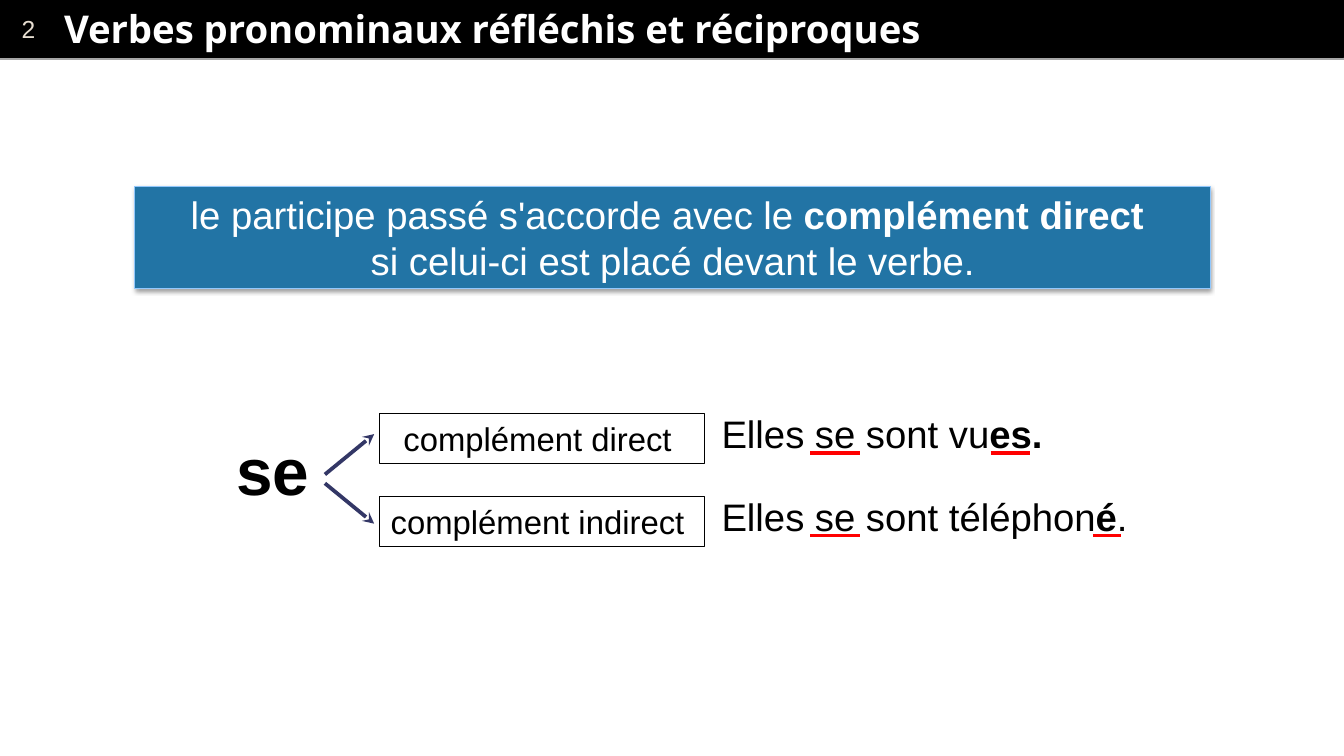
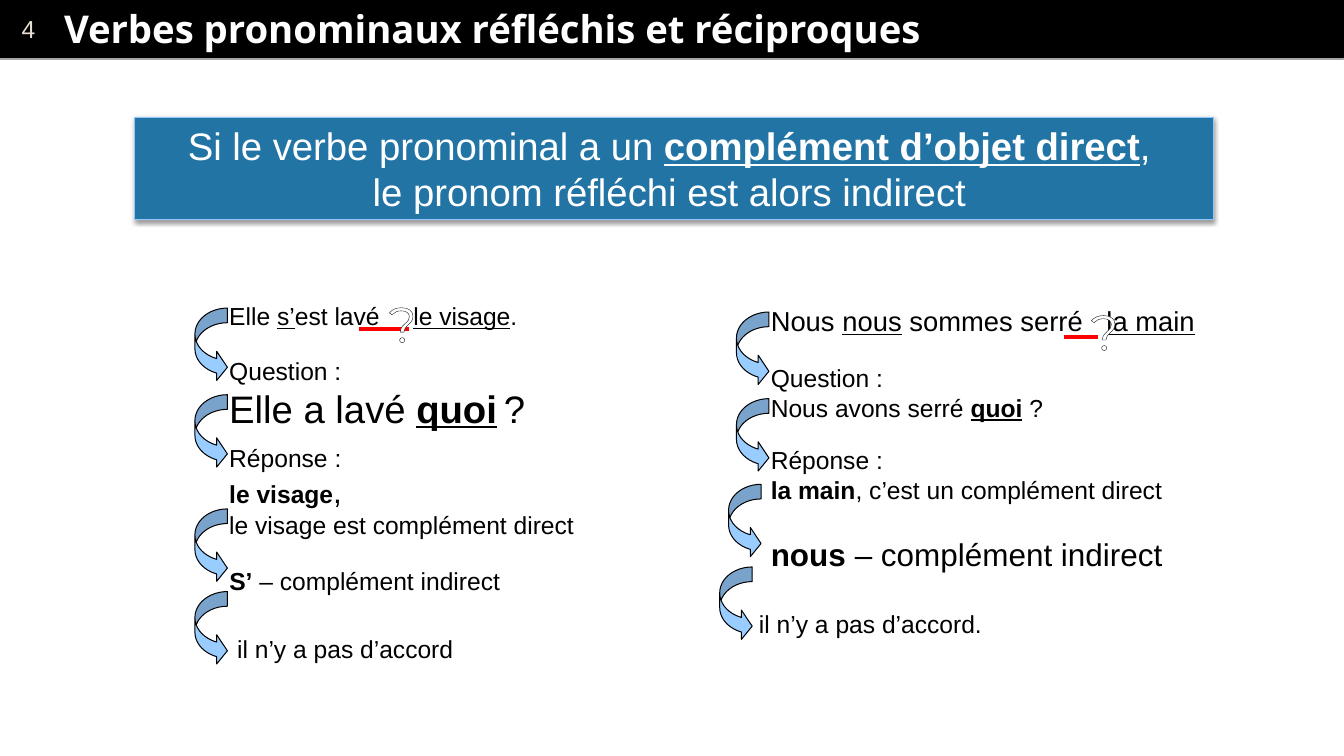
"""Build two French grammar slides about the agreement of pronominal verbs."""
import dataclasses

import lxml.etree
import pptx
import pptx.dml.color
import pptx.enum.shapes
import pptx.enum.text
import pptx.oxml.ns
import pptx.util

RGBColor = pptx.dml.color.RGBColor
Shape = pptx.enum.shapes.MSO_SHAPE
Anchor = pptx.enum.text.MSO_ANCHOR
Align = pptx.enum.text.PP_ALIGN

EMU_PER_PX = 9144
BLACK = RGBColor(0x00, 0x00, 0x00)
WHITE = RGBColor(0xFF, 0xFF, 0xFF)
RED = RGBColor(0xFF, 0x00, 0x00)
NAVY = RGBColor(0x33, 0x37, 0x66)
GREY = RGBColor(0xA6, 0xA6, 0xA6)
SAND = RGBColor(0xE7, 0xDE, 0xD1)
BANNER_BLUE = RGBColor(0x22, 0x74, 0xA5)
BANNER_EDGE = RGBColor(0x93, 0xC8, 0xFC)
ARROW_BLUE = RGBColor(0x99, 0xCC, 0xFF)

BODY_FONT = "Arial"
TITLE_FONT = "Open Sans"
MARK_FONT = "Montserrat"
TITLE = "Verbes pronominaux réfléchis et réciproques"
SLIDE_WIDTH, SLIDE_HEIGHT = 1365, 768


@dataclasses.dataclass
class Run:
    """A stretch of text with one format."""
    text: str
    size: int = 18
    bold: bool = False
    underline: bool = False


def px(*lengths):
    """Turn lengths in px into EMU."""
    return [pptx.util.Emu(length * EMU_PER_PX) for length in lengths]


def add_xml(parent, tag, **attributes):
    """Append a DrawingML element to a parent element."""
    return lxml.etree.SubElement(parent, pptx.oxml.ns.qn(tag), attributes)


def write(shape, paragraphs, color=BLACK, align=Align.LEFT, font=BODY_FONT, anchor=Anchor.MIDDLE):
    """Fill a shape with paragraphs, each a list of runs."""
    frame = shape.text_frame
    frame.word_wrap = True
    frame.auto_size = pptx.enum.text.MSO_AUTO_SIZE.NONE
    frame.vertical_anchor = anchor
    for index, runs in enumerate(paragraphs):
        paragraph = frame.add_paragraph() if index else frame.paragraphs[0]
        paragraph.alignment = align
        for part in runs:
            run = paragraph.add_run()
            run.text = part.text
            run.font.name = font
            run.font.size = pptx.util.Pt(part.size)
            run.font.bold = part.bold
            run.font.underline = part.underline
            run.font.color.rgb = color


def add_shape(slide, kind, box, fill=None, line=BLACK):
    """Add a preset shape with a thin outline."""
    shape = slide.shapes.add_shape(kind, *px(*box))
    shape.shadow.inherit = False
    if fill is None:
        shape.fill.background()
    else:
        shape.fill.solid()
        shape.fill.fore_color.rgb = fill
    shape.line.color.rgb = line
    shape.line.width = pptx.util.Pt(0.75)
    return shape


def add_line(slide, start, end, color=RED, width=2.75, arrow=False):
    """Add a straight line, with an arrowhead at its end if asked."""
    line = slide.shapes.add_connector(
        pptx.enum.shapes.MSO_CONNECTOR.STRAIGHT, *px(*start, *end))
    line.line.color.rgb = color
    line.line.width = pptx.util.Pt(width)
    if arrow:
        add_xml(line.line._get_or_add_ln(), "a:tailEnd", type="stealth")
    add_xml(line.element.spPr, "a:effectLst")
    return line


def add_text(slide, box, *paragraphs, anchor=Anchor.MIDDLE, tab=None):
    """Add a text box, with one tab stop if given."""
    shape = slide.shapes.add_textbox(*px(*box))
    write(shape, paragraphs, anchor=anchor)
    if tab:
        properties = shape.text_frame.paragraphs[0]._p.get_or_add_pPr()
        stops = add_xml(properties, "a:tabLst")
        add_xml(stops, "a:tab", pos=str(tab * EMU_PER_PX), algn="l")


def add_banner(slide, box, *paragraphs):
    """Add the blue rule banner with its soft shadow."""
    banner = add_shape(slide, Shape.RECTANGLE, box, BANNER_BLUE, BANNER_EDGE)
    effects = banner.element.spPr.find(pptx.oxml.ns.qn("a:effectLst"))
    shadow = add_xml(effects, "a:outerShdw", blurRad=str(pptx.util.Pt(3.1)),
                     dist=str(pptx.util.Pt(1.6)), dir="5400000", rotWithShape="0")
    add_xml(add_xml(shadow, "a:srgbClr", val=str(BLACK)), "a:alpha", val="38000")
    write(banner, paragraphs, WHITE, Align.CENTER)


def add_question_mark(slide, left, top):
    """Add a large outlined question mark."""
    mark = slide.shapes.add_textbox(*px(left, top, 25, 35))
    write(mark, [[Run("?", 36)]], WHITE, font=MARK_FONT, anchor=Anchor.TOP)
    mark.text_frame.word_wrap = False
    properties = mark.text_frame.paragraphs[0].runs[0].font._element
    outline = add_xml(properties, "a:ln", w=str(pptx.util.Pt(0.75)))
    add_xml(add_xml(outline, "a:solidFill"), "a:srgbClr", val=str(BLACK))
    properties.insert(0, outline)


def add_curved_arrows(slide, *corners):
    """Add a curved arrow at each corner point."""
    for left, top in corners:
        arrow = add_shape(slide, Shape.CURVED_RIGHT_ARROW, (left, top, 33, 75), ARROW_BLUE)
        for index, value in enumerate((0.45, 0.9, 0.33)):
            arrow.adjustments[index] = value


def add_titled_slide(presentation, number):
    """Add a slide with the black band, its number and the title."""
    slide = presentation.slides.add_slide(presentation.slide_layouts[5])
    band = add_shape(slide, Shape.RECTANGLE, (0, 0, SLIDE_WIDTH, 58), BLACK)
    write(band, [[Run(number)]], SAND)
    band.text_frame.margin_left = px(22)[0]
    rule = add_line(slide, (0, 60), (SLIDE_WIDTH, 60), GREY, 2)
    title = slide.shapes.title
    title.left, title.top, title.width, title.height = px(61, 1, 1285, 56)
    write(title, [[Run(TITLE, 28, bold=True)]], WHITE, font=TITLE_FONT)
    frame = title.text_frame
    frame.margin_left = frame.margin_right = frame.margin_top = frame.margin_bottom = px(4)[0]
    for shape in (band, rule):
        title.element.addprevious(shape.element)
    return slide


def build_agreement_slide(presentation):
    """Show the rule of agreement and the two roles of the pronoun."""
    slide = add_titled_slide(presentation, "2")
    add_banner(slide, (137, 189, 1092, 104),
               [Run("le participe passé s'accorde avec le ", 28),
                Run("complément direct ", 28, bold=True)],
               [Run("si celui-ci est placé devant le verbe.", 28)])
    add_text(slide, (230, 432, 104, 90), [Run("se", 48, bold=True)])
    add_line(slide, (330, 482), (380, 441), NAVY, arrow=True)
    add_line(slide, (330, 491), (380, 532), NAVY, arrow=True)
    branches = (
        (420, "complément direct ",
         [Run("Elles se sont vu", 28), Run("es.", 28, bold=True)], (1006, 1046)),
        (504, "complément indirect ",
         [Run("Elles se sont téléphon", 28), Run("é", 28, bold=True), Run(".", 28)],
         (1110, 1139)),
    )
    for top, role, example, ending in branches:
        box = add_shape(slide, Shape.RECTANGLE, (385, top, 331, 51))
        write(box, [[Run(role, 24)]], align=Align.CENTER)
        add_text(slide, (723, top - 8, 444, 57), example)
        for left, right in ((823, 873), ending):
            add_line(slide, (left, top + 40), (right, top + 40))


def build_indirect_slide(presentation):
    """Work through two examples where the pronoun is indirect."""
    slide = add_titled_slide(presentation, "4")
    add_banner(slide, (137, 119, 1096, 104),
               [Run("Si le verbe pronominal a un ", 28),
                Run("complément d’objet direct", 28, bold=True, underline=True),
                Run(", ", 28)],
               [Run("le pronom réfléchi est alors indirect ", 28)])

    add_text(slide, (223, 301, 323, 40),
             [Run("Elle "), Run("s’", underline=True), Run("est lavé\t"),
              Run("le visage", underline=True), Run(".")], tab=187)
    add_text(slide, (223, 351, 333, 97),
             [Run("Question :")],
             [Run("Elle a lavé ", 28), Run("quoi", 28, bold=True, underline=True),
              Run(" "), Run("?", 28)])
    add_text(slide, (223, 439, 370, 120),
             [Run("Réponse :")],
             [Run("le visage", bold=True), Run(",", 23)],
             [Run("le visage est complément direct")])
    add_text(slide, (223, 565, 428, 50),
             [Run("S’", bold=True), Run(" – complément indirect")])
    add_text(slide, (231, 639, 313, 50), [Run("il n’y a pas d’accord")], anchor=Anchor.TOP)
    add_curved_arrows(slide, (198, 313), (198, 401), (198, 517), (198, 601))
    add_line(slide, (365, 334), (415, 334))
    add_question_mark(slide, 385, 293)

    add_text(slide, (773, 304, 456, 43),
             [Run("Nous ", 20), Run("nous", 20, underline=True), Run(" sommes serré\t", 20),
              Run("la main", 20, underline=True)], tab=341)
    add_text(slide, (773, 354, 398, 90),
             [Run("Question :")],
             [Run("Nous avons serré "), Run("quoi", bold=True, underline=True), Run(" ?")])
    add_text(slide, (773, 437, 460, 90),
             [Run("Réponse :")],
             [Run("la main", bold=True), Run(", c’est un complément direct")])
    add_text(slide, (773, 539, 428, 48),
             [Run("nous", 23, bold=True), Run(" – complément indirect", 23)])
    add_text(slide, (761, 614, 332, 50), [Run("il n’y a pas d’accord.")], anchor=Anchor.TOP)
    add_curved_arrows(slide, (748, 317), (748, 405), (740, 492), (731, 576))
    add_line(slide, (1081, 342), (1115, 342))
    add_question_mark(slide, 1098, 301)


def main():
    """Build and save the presentation."""
    presentation = pptx.Presentation()
    presentation.slide_width, presentation.slide_height = px(SLIDE_WIDTH, SLIDE_HEIGHT)
    build_agreement_slide(presentation)
    build_indirect_slide(presentation)
    presentation.save("out.pptx")


if __name__ == "__main__":
    main()
